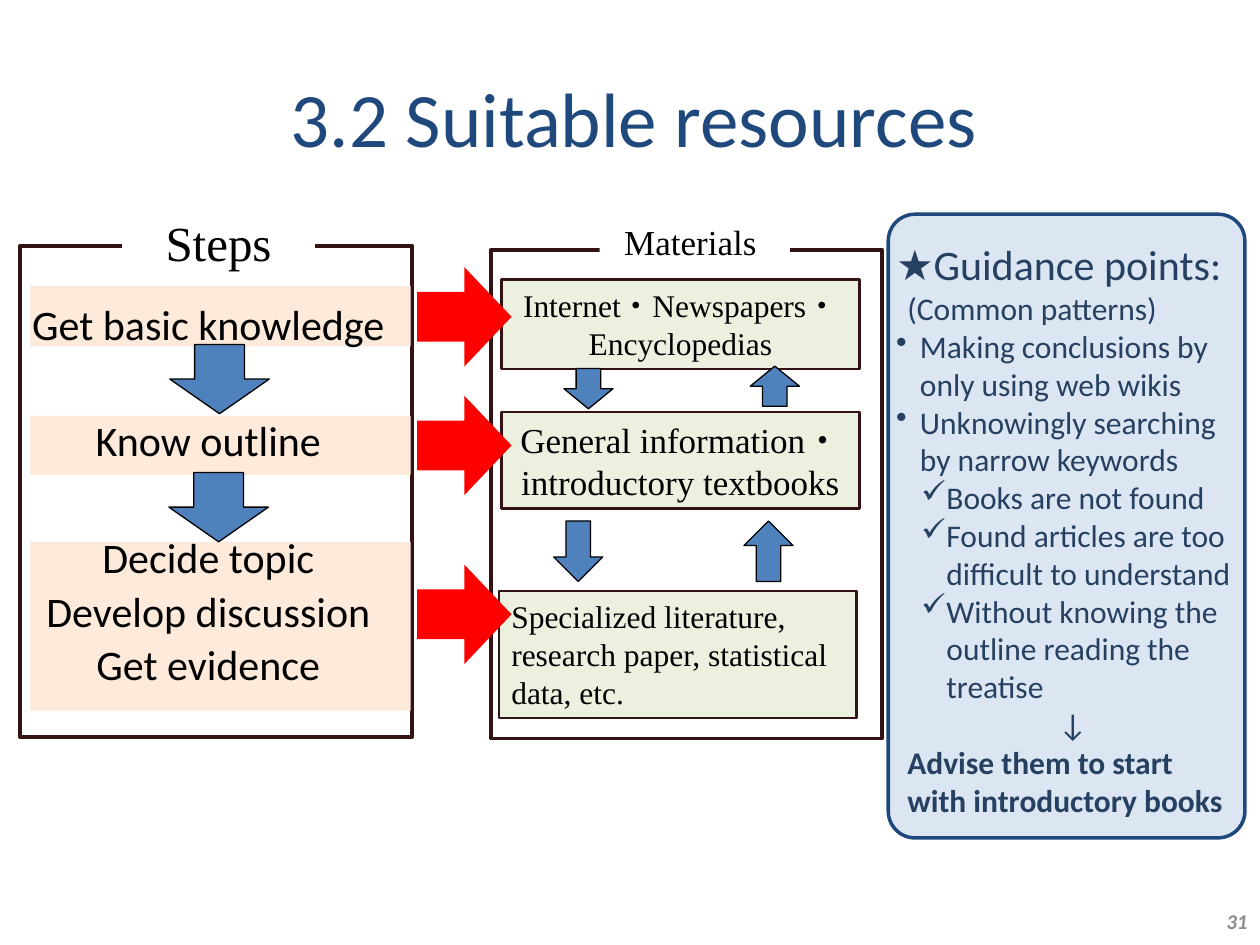
from dataclasses import dataclass

from lxml.etree import SubElement
from pptx import Presentation
from pptx.dml.color import RGBColor
from pptx.enum.shapes import MSO_SHAPE
from pptx.enum.text import MSO_ANCHOR, PP_ALIGN
from pptx.oxml.ns import qn
from pptx.util import Pt


@dataclass(frozen=True)
class Theme:
    sans: str = "Calibri"
    serif: str = "Times New Roman"
    white: str = "FFFFFF"
    black: str = "000000"
    frame: str = "321212"
    peach: str = "FDEADA"
    green: str = "EBF1DE"
    blue: str = "4F81BD"
    red: str = "FF0000"
    pale_blue: str = "DCE6F2"
    navy: str = "1F497D"
    ink: str = "254061"
    grey: str = "8C8C8C"
    title: int = 44
    heading: int = 28
    step: int = 24
    label: int = 20
    body: int = 18
    number: int = 12


THEME = Theme()


def add_block(page, kind, left, top, width, height, fill, line=None, weight=0.75):
    box = page.shapes.add_shape(kind, Pt(left), Pt(top), Pt(width), Pt(height))
    box.shadow.inherit = False
    box.fill.solid()
    box.fill.fore_color.rgb = RGBColor.from_string(fill)
    if line:
        box.line.color.rgb = RGBColor.from_string(line)
        box.line.width = Pt(weight)
    else:
        box.line.fill.background()
    return box


def add_text_box(page, left, top, width, height, anchor=MSO_ANCHOR.TOP):
    box = page.shapes.add_textbox(Pt(left), Pt(top), Pt(width), Pt(height))
    prepare_frame(box, anchor)
    return box


def prepare_frame(box, anchor):
    box.text_frame.word_wrap = True
    box.text_frame.vertical_anchor = anchor


def add_para(box, text, size, font=THEME.sans, color=THEME.black,
             align=PP_ALIGN.LEFT, bold=False, italic=False):
    """Fill the first paragraph if it is still empty, otherwise append one."""
    frame = box.text_frame
    para = frame.paragraphs[0]
    if para.runs:
        para = frame.add_paragraph()
    para.alignment = align
    span = para.add_run()
    span.text = text
    span.font.size = Pt(size)
    span.font.name = font
    span.font.bold = bold
    span.font.italic = italic
    span.font.color.rgb = RGBColor.from_string(color)
    return para


def set_indent(para, margin, first=0, bullet=None):
    properties = para._p.get_or_add_pPr()
    properties.set("marL", str(Pt(margin)))
    properties.set("indent", str(Pt(first)))
    if bullet:
        SubElement(properties, qn("a:buChar")).set("char", bullet)


def add_label(page, text, size, left, top, width, height):
    """White heading that interrupts the top edge of a frame."""
    box = add_block(page, MSO_SHAPE.RECTANGLE, left, top, width, height, THEME.white)
    prepare_frame(box, MSO_ANCHOR.TOP)
    add_para(box, text, size, THEME.serif, align=PP_ALIGN.CENTER)


def add_steps(page):
    add_block(page, MSO_SHAPE.RECTANGLE, 11.5, 140.4, 224, 280.8,
              THEME.white, THEME.frame, 2.25)
    for top, height in ((309.6, 96.5), (237.6, 33.8), (163.4, 34.6)):
        add_block(page, MSO_SHAPE.RECTANGLE, 17.3, top, 217.4, height, THEME.peach)

    # One text over the three bands; wide gaps separate the bands
    box = add_text_box(page, 8.6, 170, 221, 224.6)
    near, far = 4.8, 40.8
    for text, gap in (("Get basic knowledge", near), ("Know outline", far),
                      ("Decide topic", far), ("Develop discussion", near),
                      ("Get evidence", near)):
        para = add_para(box, text, THEME.step, align=PP_ALIGN.CENTER)
        para.line_spacing = 0.9
        para.space_before = Pt(gap)

    for left, top in ((96.5, 270), (97, 196.8)):
        add_block(page, MSO_SHAPE.DOWN_ARROW, left, top, 56.9, 39.6,
                  THEME.blue, THEME.black)


def add_materials(page):
    add_block(page, MSO_SHAPE.RECTANGLE, 280.8, 142.6, 223.2, 279.4,
              THEME.white, THEME.frame, 2.25)
    center, left = PP_ALIGN.CENTER, PP_ALIGN.LEFT
    # Text, size, alignment, side margin, left, top, height
    materials = (
        ("Internet・Newspapers・Encyclopedias", THEME.body, center, 1,
         286.6, 159.8, 51.1),
        ("General information・introductory textbooks", THEME.label, center, 1,
         286.6, 235.4, 55.4),
        ("Specialized literature, research paper, statistical data, etc.",
         THEME.body, left, 7.2, 285.1, 337.7, 72.7),
    )
    for text, size, align, margin, x, top, height in materials:
        box = add_block(page, MSO_SHAPE.RECTANGLE, x, top, 204.5, height,
                        THEME.green, THEME.frame, 1.5)
        prepare_frame(box, MSO_ANCHOR.TOP)
        box.text_frame.margin_left = box.text_frame.margin_right = Pt(margin)
        add_para(box, text, size, THEME.serif, align=align)

    # Movement between the levels of material
    down, up = MSO_SHAPE.DOWN_ARROW, MSO_SHAPE.UP_ARROW
    for kind, x, top, height in ((down, 322.2, 210.6, 23), (up, 428.7, 209.2, 23),
                                 (down, 316.4, 297.7, 34.6), (up, 425.1, 297.7, 34.6)):
        add_block(page, kind, x, top, 28.1, height, THEME.blue, THEME.black)


def add_guidance(page):
    box = add_block(page, MSO_SHAPE.ROUNDED_RECTANGLE, 507.6, 122.4, 203.8, 356.4,
                    THEME.pale_blue, THEME.navy, 2)
    box.adjustments[0] = 0.075
    prepare_frame(box, MSO_ANCHOR.MIDDLE)
    frame = box.text_frame
    frame.margin_left = frame.margin_right = 0
    frame.margin_top, frame.margin_bottom = Pt(5.8), Pt(2.9)

    add_para(box, "★Guidance points:", THEME.step, color=THEME.ink)
    plain, dot, check = (6.5, 0), (13.7, -13.7, "•"), (28.8, -14.4, "✓")
    for text, indent in (
        ("(Common patterns)", plain),
        ("Making conclusions by only using web wikis", dot),
        ("Unknowingly searching by narrow keywords", dot),
        ("Books are not found", check),
        ("Found articles are too difficult to understand", check),
        ("Without knowing the outline reading the treatise", check),
    ):
        set_indent(add_para(box, text, THEME.body, color=THEME.ink), *indent)
    arrow = add_para(box, "↓", THEME.body, color=THEME.ink, align=PP_ALIGN.CENTER)
    set_indent(arrow, 20.9, -13.7)
    advice = add_para(box, "Advise them to start with introductory books",
                      THEME.body, color=THEME.ink, bold=True)
    set_indent(advice, *plain)


def main():
    deck = Presentation()
    deck.slide_width, deck.slide_height = Pt(720), Pt(540)
    page = deck.slides.add_slide(deck.slide_layouts[6])

    # Title and page number
    title = add_text_box(page, 19.4, 21.6, 686.2, 90, MSO_ANCHOR.MIDDLE)
    add_para(title, "3.2 Suitable resources", THEME.title, color=THEME.navy,
             align=PP_ALIGN.CENTER)
    number = add_text_box(page, 552.2, 511.9, 167.8, 28.8, MSO_ANCHOR.MIDDLE)
    add_para(number, "31", THEME.number, color=THEME.grey, align=PP_ALIGN.RIGHT,
             bold=True, italic=True)

    # Columns and their headings
    add_materials(page)
    add_steps(page)
    add_label(page, "Materials ", THEME.label, 342.7, 122.4, 108.7, 31.7)
    add_label(page, "Steps", THEME.heading, 69.8, 118.1, 110.2, 41)
    add_guidance(page)

    # Red arrows from each step to its material
    for top in (152.6, 226.1, 322.6):
        add_block(page, MSO_SHAPE.RIGHT_ARROW, 238.3, top, 54, 56.9, THEME.red)

    deck.save("out.pptx")


if __name__ == "__main__":
    main()
